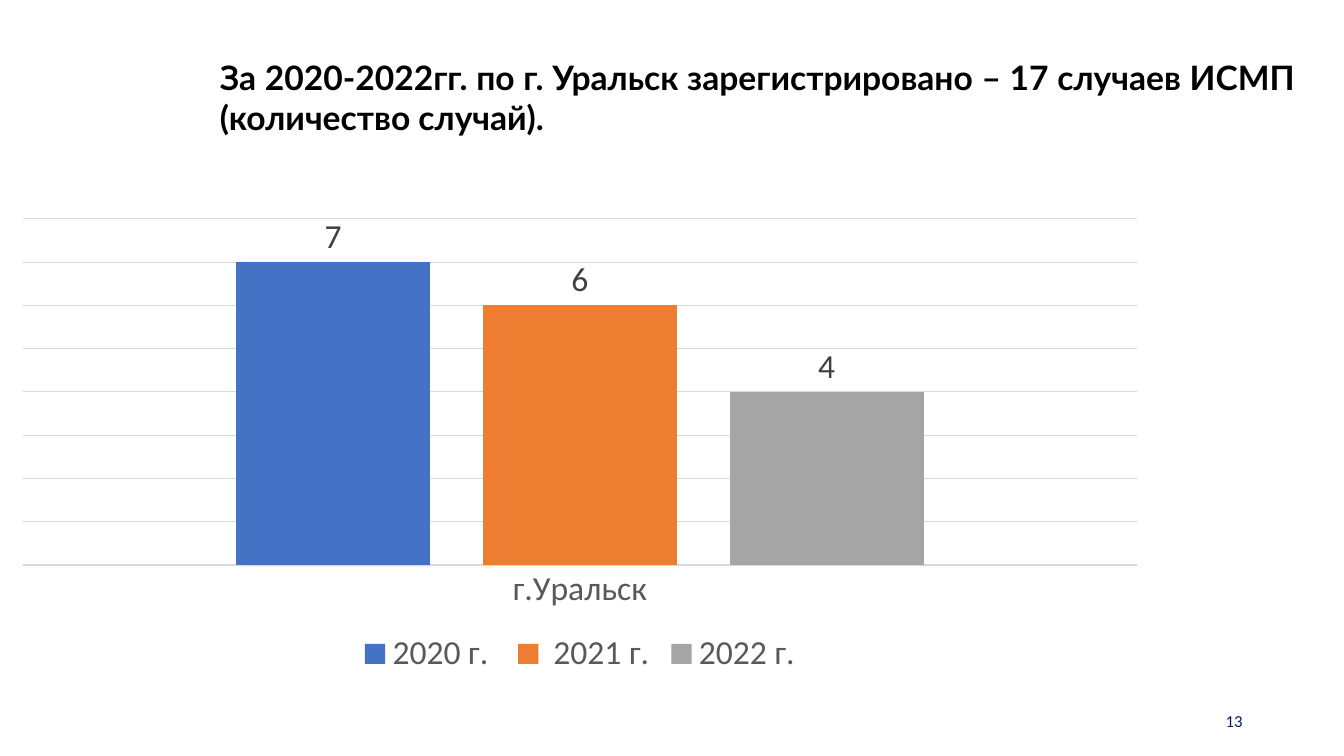
from dataclasses import dataclass

from pptx import Presentation
from pptx.chart.data import CategoryChartData
from pptx.dml.color import RGBColor
from pptx.enum.chart import XL_CHART_TYPE as ChartType
from pptx.enum.chart import XL_LABEL_POSITION as LabelPosition
from pptx.enum.chart import XL_LEGEND_POSITION as LegendPosition
from pptx.enum.chart import XL_TICK_LABEL_POSITION as TickLabels
from pptx.enum.chart import XL_TICK_MARK as TickMark
from pptx.enum.text import MSO_ANCHOR as Anchor
from pptx.enum.text import MSO_AUTO_SIZE as AutoSize
from pptx.enum.text import PP_ALIGN as Align
from pptx.util import Inches, Pt


@dataclass(frozen=True)
class Theme:
    """Colours, fonts and type sizes of the slide."""
    title_font: str = "Lato"
    body_font: str = "Calibri"
    title: str = "000000"
    axis_text: str = "595959"
    label: str = "404040"
    rule: str = "D9D9D9"
    page_number: str = "002060"
    large: int = 24
    small: int = 12
    rule_width: float = 0.75


THEME = Theme()
WIDTH, HEIGHT = Inches(13.33), Inches(7.5)
TITLE_AREA = (0.156, 0.068, 0.815, 0.121)
CHART_AREA = (0, 0.277, 0.863, 0.624)
NUMBER_AREA = (0.707, 0.927, 0.225, 0.053)
CASES = (("2020 г. ", 7, "4472C4"), (" 2021 г.", 6, "ED7D31"), ("2022 г.", 4, "A5A5A5"))


def share(area):
    """Turn shares of the slide into left, top, width and height."""
    return [round(part * side) for part, side in zip(area, (WIDTH, HEIGHT) * 2)]


def style_font(font, size, color, name=THEME.body_font, bold=False):
    """Apply a size, colour, face and weight to a font."""
    font.size, font.name, font.bold = Pt(size), name, bold
    font.color.rgb = RGBColor.from_string(color)


def style_line(line):
    """Give a line the thin grey look of the chart's rules."""
    line.color.rgb = RGBColor.from_string(THEME.rule)
    line.width = Pt(THEME.rule_width)


def set_title(slide, text):
    """Place and format the title placeholder."""
    title = slide.shapes.title
    title.left, title.top, title.width, title.height = share(TITLE_AREA)
    frame = title.text_frame
    frame.text = text
    frame.word_wrap = True
    frame.auto_size = AutoSize.SHAPE_TO_FIT_TEXT
    frame.vertical_anchor = Anchor.TOP
    paragraph = frame.paragraphs[0]
    paragraph.alignment = Align.JUSTIFY
    paragraph.line_spacing = 1.0
    style_font(paragraph.font, THEME.large, THEME.title, THEME.title_font, True)


def style_axes(chart):
    """Format the category axis and leave only gridlines of the value axis."""
    category = chart.category_axis
    category.major_tick_mark = category.minor_tick_mark = TickMark.NONE
    category.tick_label_position = TickLabels.NEXT_TO_AXIS
    style_font(category.tick_labels.font, THEME.large, THEME.axis_text)
    style_line(category.format.line)
    value = chart.value_axis
    value.minimum_scale, value.maximum_scale, value.major_unit = 0, 8, 1
    value.visible = False
    value.has_major_gridlines = True
    style_line(value.major_gridlines.format.line)


def style_series(series, color):
    """Fill a series and show its value above the column."""
    series.format.fill.solid()
    series.format.fill.fore_color.rgb = RGBColor.from_string(color)
    series.invert_if_negative = False
    labels = series.data_labels
    labels.show_value = True
    labels.position = LabelPosition.OUTSIDE_END
    style_font(labels.font, THEME.large, THEME.label)


def add_cases_chart(slide, category, cases):
    """Add the column chart with one series per year."""
    data = CategoryChartData()
    data.categories = [category]
    for year, count, _ in cases:
        data.add_series(year, [count])
    chart = slide.shapes.add_chart(
        ChartType.COLUMN_CLUSTERED, *share(CHART_AREA), data).chart
    style_font(chart.font, THEME.large, THEME.title)
    chart.has_title = False
    chart.has_legend = True
    chart.legend.position = LegendPosition.BOTTOM
    chart.legend.include_in_layout = False
    style_font(chart.legend.font, THEME.large, THEME.axis_text)
    style_axes(chart)
    plot = chart.plots[0]
    plot.gap_width, plot.overlap = 219, -27
    plot.vary_by_categories = False
    for series, (_, _, color) in zip(plot.series, cases):
        style_series(series, color)


def add_page_number(slide, number):
    """Add the right-aligned page number."""
    frame = slide.shapes.add_textbox(*share(NUMBER_AREA)).text_frame
    frame.text = str(number)
    frame.word_wrap = True
    frame.vertical_anchor = Anchor.MIDDLE
    paragraph = frame.paragraphs[0]
    paragraph.alignment = Align.RIGHT
    style_font(paragraph.font, THEME.small, THEME.page_number)


def main():
    """Build and save the slide."""
    presentation = Presentation()
    presentation.slide_width, presentation.slide_height = WIDTH, HEIGHT
    slide = presentation.slides.add_slide(presentation.slide_layouts[5])
    add_page_number(slide, 13)
    add_cases_chart(slide, "г.Уральск", CASES)
    set_title(slide, "За 2020-2022гг. по г. Уральск зарегистрировано – "
                     "17 случаев ИСМП (количество случай).")
    presentation.save("out.pptx")


if __name__ == "__main__":
    main()
